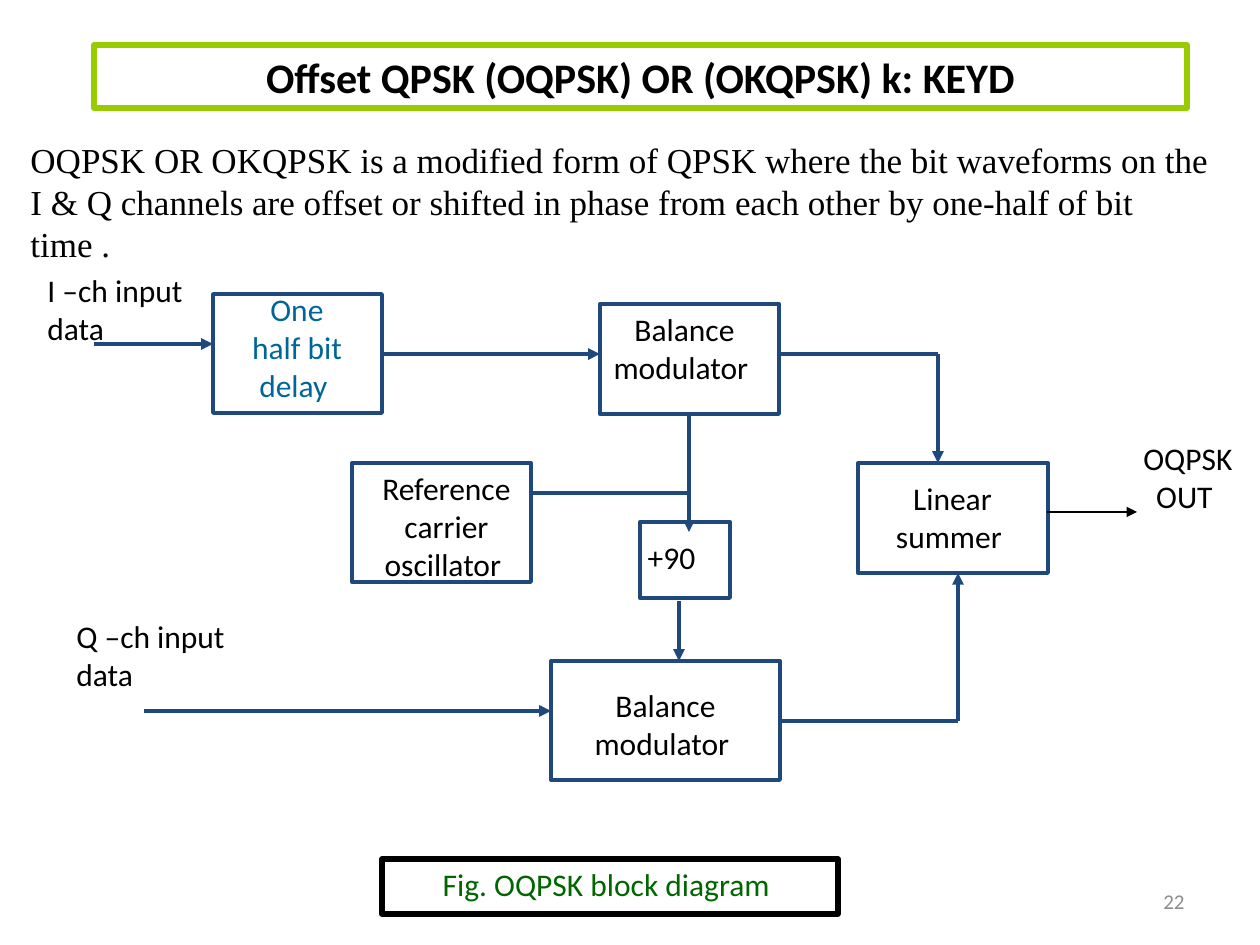
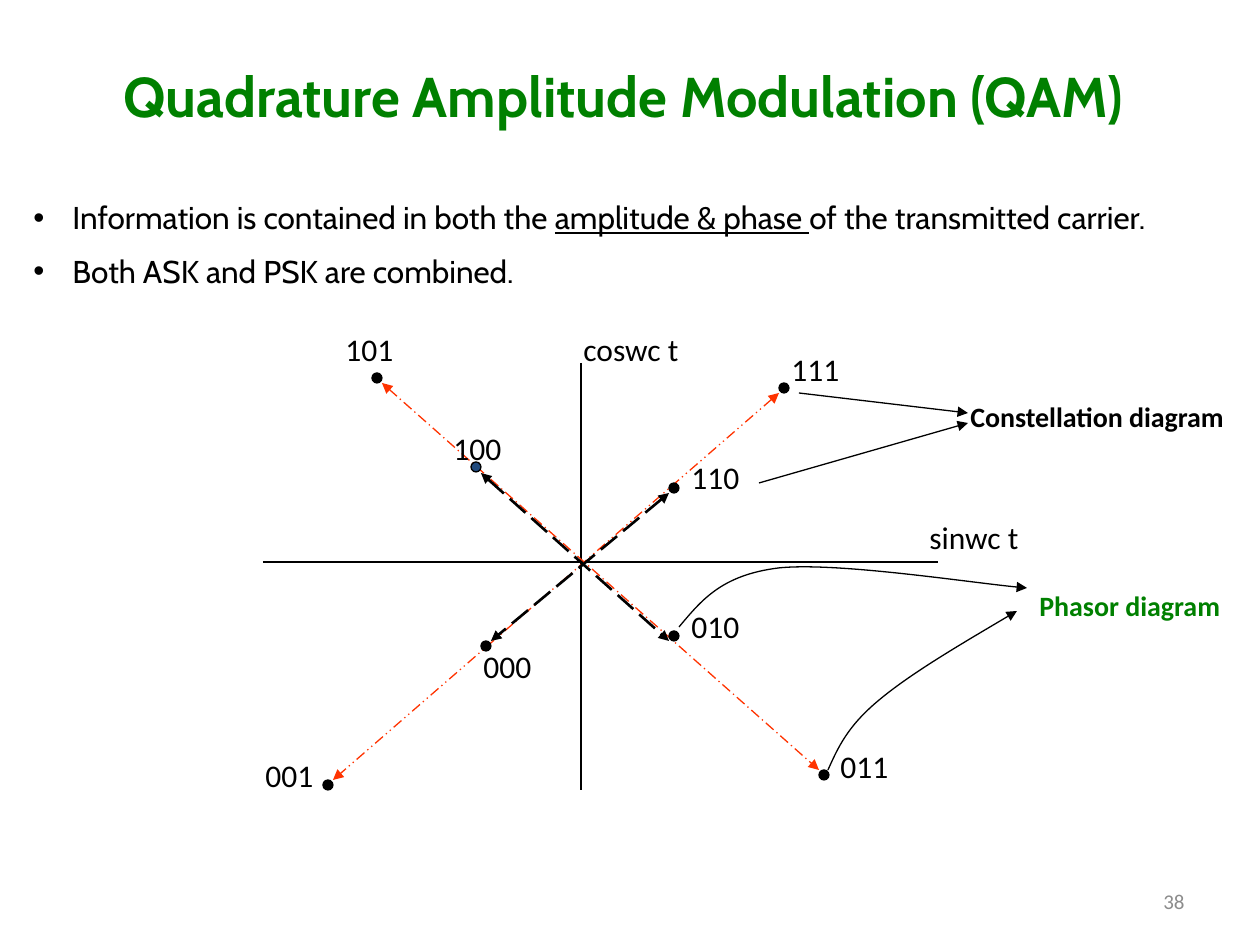
"""Build two slides on OQPSK and quadrature amplitude modulation."""
from lxml.etree import SubElement
from pptx import Presentation
from pptx.dml.color import RGBColor
from pptx.enum.dml import MSO_LINE as DASH
from pptx.enum.shapes import MSO_CONNECTOR, MSO_SHAPE
from pptx.enum.text import MSO_ANCHOR as ANCHOR, PP_ALIGN as ALIGN
from pptx.oxml.ns import qn
from pptx.util import Emu, Pt

EMU_PER_PX = 914400 / 126
BLACK, WHITE, NAVY, RED = "000000", "FFFFFF", "1F497D", "FF3300"
GREEN, DARK_GREEN, LIME, TEAL, GREY = "008000", "006600", "99CC00", "006699", "8C8C8C"


def px(length):
    """Turn pixels into EMU."""
    return Emu(round(length * EMU_PER_PX))


def rgb(value):
    """Turn a hex string into a colour."""
    return RGBColor.from_string(value)


def set_font(font, size, color, bold=False, name="Calibri"):
    """Set the look of a paragraph font."""
    font.name, font.size, font.bold = name, Pt(size), bold
    font.color.rgb = rgb(color)


def set_line(line, color, width, dash=None, ends=()):
    """Style a line and add its arrowheads."""
    line.color.rgb = rgb(color)
    line.width = Pt(width)
    if dash is not None:
        line.dash_style = dash
    for end in ends:
        SubElement(line._get_or_add_ln(), qn(f"a:{end}End"), type="triangle")


def write(shape, text, size=18, color=BLACK, bold=False, align=ALIGN.LEFT, name="Calibri"):
    """Fill the first paragraph of a shape."""
    frame = shape.text_frame
    frame.word_wrap = True
    frame.vertical_anchor = ANCHOR.TOP
    para = frame.paragraphs[0]
    para.text = text
    para.alignment = align
    set_font(para.font, size, color, bold, name)
    return frame


def add_text(page, area, text, **style):
    """Add a wrapped text box."""
    return write(page.shapes.add_textbox(*map(px, area)), text, **style)


def add_shape(page, area, color, width, fill=None, kind=MSO_SHAPE.RECTANGLE):
    """Add an outlined shape, filled or empty."""
    shape = page.shapes.add_shape(kind, *map(px, area))
    shape.shadow.inherit = False
    if fill:
        shape.fill.solid()
        shape.fill.fore_color.rgb = rgb(fill)
    else:
        shape.fill.background()
    set_line(shape.line, color, width)
    return shape


def add_line(page, ends, color=BLACK, width=0.75, dash=None, arrows=("tail",)):
    """Add a straight line, by default with an arrowhead at its end."""
    line = page.shapes.add_connector(MSO_CONNECTOR.STRAIGHT, *map(px, ends))
    set_line(line.line, color, width, dash, arrows)
    SubElement(line._element.spPr, qn("a:effectLst"))


def add_curve(page, start, points):
    """Add an arrow made of cubic curves, three points to each."""
    builder = page.shapes.build_freeform(*start, scale=EMU_PER_PX)
    builder.add_line_segments(points, close=False)
    curve = builder.convert_to_shape()
    curve.shadow.inherit = False
    curve.fill.background()
    set_line(curve.line, BLACK, 0.75, ends=("tail",))
    steps = curve._element.findall(".//" + qn("a:lnTo"))
    for first in range(0, len(steps), 3):
        bend = SubElement(steps[first].getparent(), qn("a:cubicBezTo"))
        for step in steps[first:first + 3]:
            bend.append(step[0])
            step.getparent().remove(step)


def add_bullet(frame, spans, space):
    """Add a bullet paragraph from (text, underlined) spans."""
    para = frame.add_paragraph()
    properties = para._p.get_or_add_pPr()
    properties.set("marL", str(px(39)))
    properties.set("indent", str(-px(39)))
    SubElement(properties, qn("a:buFont"), typeface="Arial")
    SubElement(properties, qn("a:buChar"), char="•")
    para.space_before = Pt(space)
    set_font(para.font, 18, BLACK, name="Cabin")
    for text, underlined in spans:
        span = para.add_run()
        span.text = text
        if underlined:
            span.font.underline = True


def add_page(deck, number):
    """Add a blank slide with its page number."""
    page = deck.slides.add_slide(deck.slide_layouts[6])
    frame = add_text(page, (903, 876, 294, 50), number, size=12, color=GREY, align=ALIGN.RIGHT)
    frame.vertical_anchor = ANCHOR.MIDDLE
    return page


def build_block_diagram(deck):
    """Build the OQPSK transmitter slide."""
    page = add_page(deck, "22")
    title = add_shape(page, (94, 45, 1093, 63), LIME, 3)
    write(title, "Offset QPSK (OQPSK) OR (OKQPSK) k: KEYD", size=24, bold=True, align=ALIGN.CENTER)
    add_text(page, (18, 132, 1215, 97),
             "OQPSK OR OKQPSK is a modified form of QPSK where the bit waveforms on the "
             "I & Q channels are offset or shifted in phase from each other by one-half of bit\vtime .",
             size=20, name="Times New Roman")

    blocks = [
        ("+90", (640, 522, 90, 76), (617, 532, 109, 50), BLACK),
        ("Reference carrier oscillator ", (352, 463, 179, 119), (352, 463, 189, 126), BLACK),
        ("Balance modulator ", (551, 661, 229, 119), (581, 680, 169, 88), BLACK),
        ("Linear summer ", (858, 463, 190, 110), (878, 473, 149, 88), BLACK),
        ("Balance modulator ", (600, 304, 179, 110), (600, 304, 169, 88), BLACK),
        ("One half bit delay ", (213, 294, 169, 119), (233, 284, 128, 126), TEAL),
    ]
    for _, block, _, _ in blocks:
        add_shape(page, block, NAVY, 2.25, WHITE)

    plain_wires = [(779, 354, 938, 354), (779, 721, 958, 721), (531, 493, 689, 493)]
    arrow_wires = [
        (94, 344, 213, 344), (144, 711, 551, 711), (938, 354, 938, 463), (958, 721, 958, 573),
        (679, 601, 679, 661), (689, 413, 689, 532), (382, 354, 600, 354),
    ]
    for wire in plain_wires:
        add_line(page, wire, NAVY, 2.25, arrows=())
    for wire in arrow_wires:
        add_line(page, wire, NAVY, 2.25)
    add_line(page, (1047, 512, 1137, 512))

    for text, _, area, color in blocks:
        add_text(page, area, text, color=color, align=ALIGN.CENTER)
    add_text(page, (35, 265, 169, 72), "I –ch input data")
    add_text(page, (64, 611, 213, 72), "Q –ch input data")
    add_text(page, (1116, 433, 144, 88), "OQPSK OUT ", align=ALIGN.CENTER)
    caption = add_shape(page, (382, 859, 456, 55), BLACK, 3)
    write(caption, "Fig. OQPSK block diagram ", color=DARK_GREEN, align=ALIGN.CENTER)


def build_constellation(deck):
    """Build the QAM constellation slide."""
    page = add_page(deck, "38")
    frame = add_text(page, (21, 55, 1205, 825), "Quadrature Amplitude Modulation (QAM)",
                     size=32, color=GREEN, bold=True, align=ALIGN.CENTER, name="Cabin")
    add_bullet(frame, [("Information is contained in both the ", False),
                       ("amplitude & phase ", True),
                       ("of the transmitted carrier.", False)], 40)
    add_bullet(frame, [("Both ASK and PSK are combined.", False)], 9)

    for axis in [(581, 363, 581, 790), (263, 562, 938, 562)]:
        add_line(page, axis, arrows=())
    phasors = [
        ((382, 383, 819, 770), RED, 0.75, DASH.LONG_DASH_DOT),
        ((779, 393, 333, 780), RED, 0.75, DASH.DASH_DOT_DOT),
        ((481, 473, 669, 641), BLACK, 1.5, DASH.LONG_DASH),
        ((669, 493, 491, 641), BLACK, 1.5, DASH.LONG_DASH),
    ]
    for ends, color, width, dash in phasors:
        add_line(page, ends, color, width, dash, ("head", "tail"))

    symbols = [
        ("111", (779, 383), (779, 344)), ("101", (372, 373), (333, 324)),
        ("110", (669, 483), (679, 452)), ("000", (481, 641), (471, 641)),
        ("010", (669, 631), (679, 601)), ("100", (471, 462), (441, 423)),
        ("001", (323, 780), (253, 750)), ("011", (819, 770), (828, 741)),
    ]
    for bits, dot, label in symbols:
        fill = NAVY if bits == "100" else BLACK
        add_shape(page, (*dot, 10, 10), BLACK, 0.75, fill, MSO_SHAPE.FLOWCHART_CONNECTOR)
        add_text(page, (*label, 79, 50), bits)

    add_curve(page, (679, 627), [(701, 601), (721, 575), (779, 568),
                                 (837, 562), (985, 585), (1027, 588)])
    add_curve(page, (828, 770), [(838, 748), (847, 727), (878, 701),
                                 (910, 674), (963, 643), (1017, 611)])
    for pointer in [(759, 483, 968, 423), (799, 393, 968, 413)]:
        add_line(page, pointer)
    add_text(page, (917, 512, 149, 50), "sinwc t")
    add_text(page, (571, 324, 149, 50), "coswc t")
    add_text(page, (1027, 582, 233, 47), "Phasor diagram", size=16, color=GREEN, bold=True)
    add_text(page, (958, 393, 302, 47), "Constellation diagram", size=16, bold=True)


def main():
    """Build and save the deck."""
    deck = Presentation()
    deck.slide_width, deck.slide_height = px(1260), px(945)
    build_block_diagram(deck)
    build_constellation(deck)
    deck.save("out.pptx")


if __name__ == "__main__":
    main()
